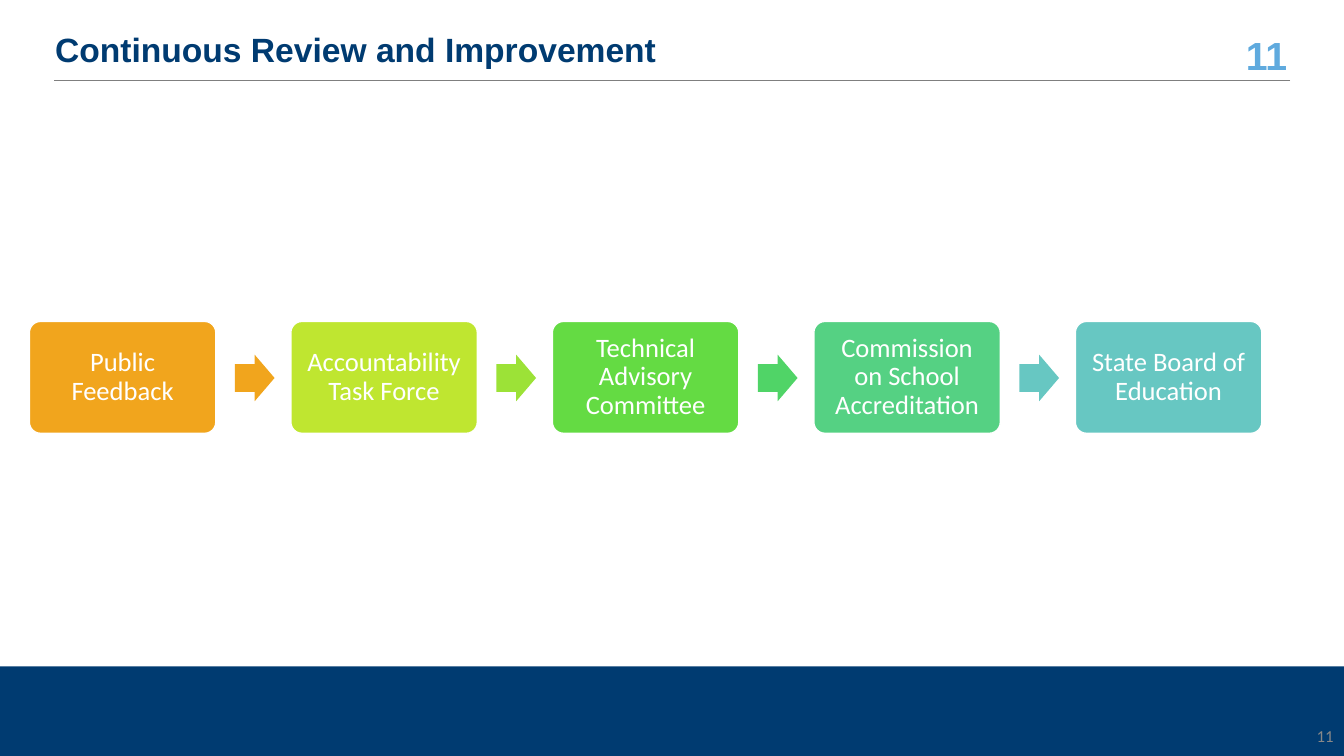
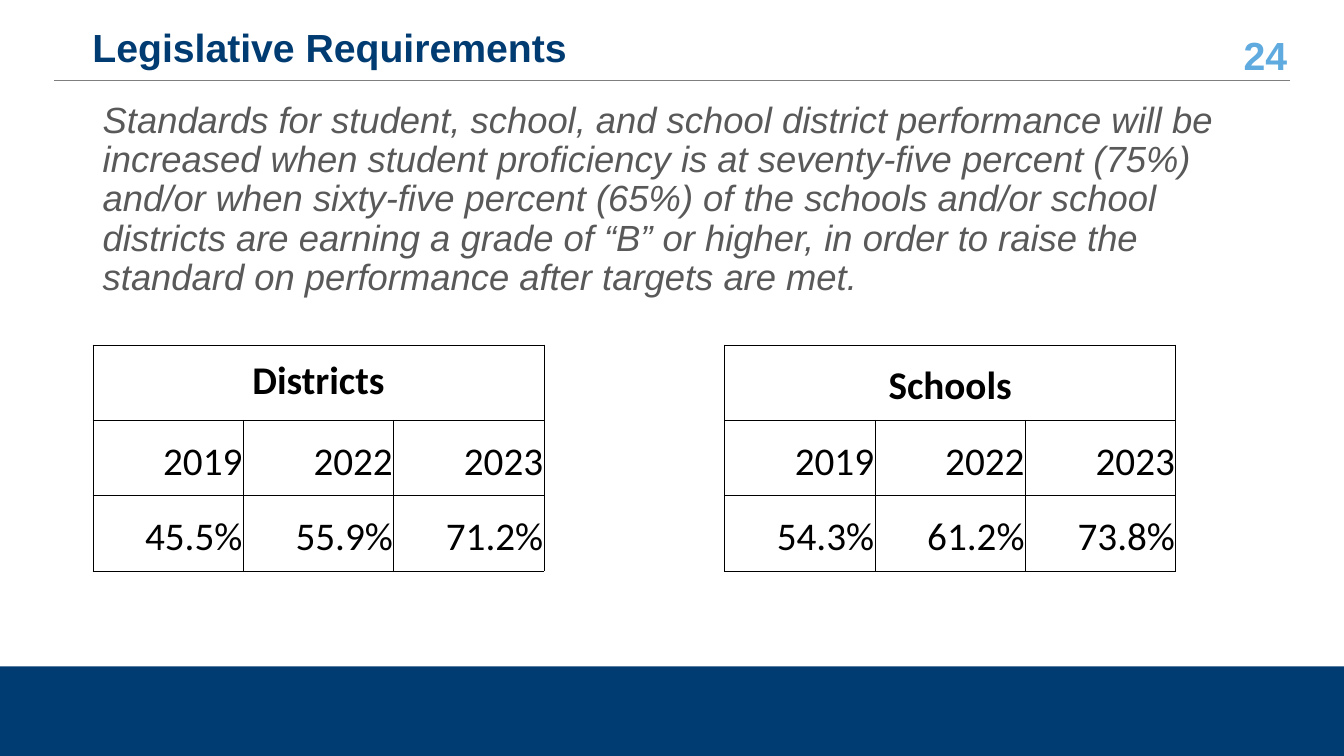
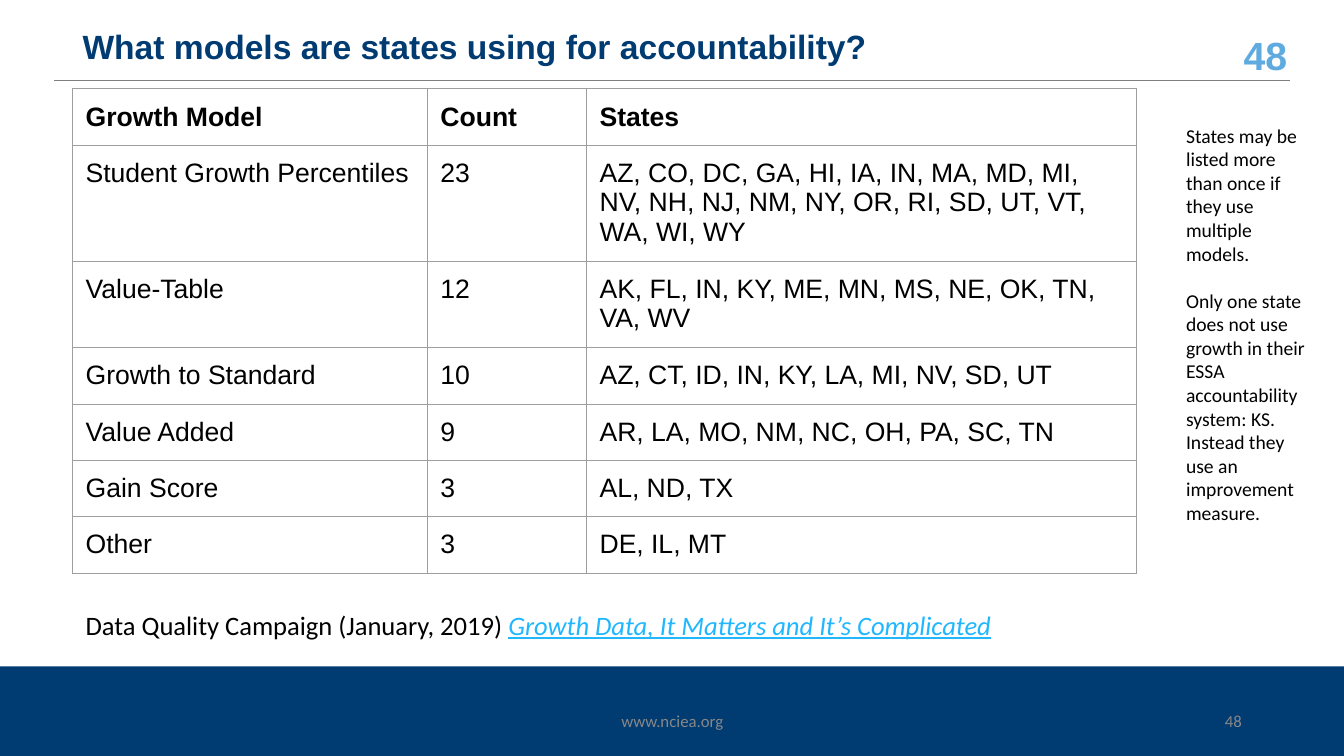
"""Build three slides on school accountability review, targets and growth models."""
from lxml.etree import SubElement
from pptx import Presentation
from pptx.dml.color import RGBColor
from pptx.enum.shapes import MSO_CONNECTOR, MSO_SHAPE
from pptx.enum.text import MSO_ANCHOR, MSO_AUTO_SIZE, PP_ALIGN
from pptx.oxml import parse_xml
from pptx.oxml.ns import nsdecls, qn
from pptx.util import Cm, Pt

NAVY, SKY, GREY, WHITE, BLACK = "003B71", "5FAADE", "888888", "FFFFFF", "000000"
WIDTH, HEIGHT = 33.87, 19.05
PLAIN_INSETS = (0.25, 0.13, 0.25, 0.13)
SIDES = ("left", "top", "right", "bottom")

TITLE_FONT = {"name": "Arial", "size": Pt(24), "bold": True, "color": NAVY}
NUMBER_FONT = {"name": "Arial", "size": Pt(28), "bold": True, "color": SKY}
FOOTER_FONT = {"name": "Calibri", "size": Pt(12), "color": GREY}
STEP_FONT = {"name": "Calibri", "size": Pt(19), "color": WHITE}
QUOTE_FONT = {"name": "Arial", "size": Pt(26), "italic": True, "color": "595959"}
RATE_FONT = {"name": "Calibri", "size": Pt(28), "color": BLACK}
MODEL_FONT = {"name": "Arial", "size": Pt(19), "color": BLACK}
SOURCE_FONT = {"name": "Calibri", "size": Pt(19), "color": BLACK}
LINK_FONT = {**SOURCE_FONT, "color": "20B7FF", "italic": True, "underline": True}
NOTE_FONT = {"name": "Calibri", "size": Pt(14), "color": BLACK}

TIGHT = {"line_spacing": 0.9}
CENTRED = {"alignment": PP_ALIGN.CENTER}
RIGHT = {"alignment": PP_ALIGN.RIGHT}

STEPS = [
    ("Public Feedback", "F1A51D", "F1A51D"),
    ("Accountability Task Force", "BFE630", "9CE237"),
    ("Technical Advisory Committee", "64DB43", "50D467"),
    ("Commission on School Accreditation", "55D183", "67C7C2"),
    ("State Board of Education", "67C7C2", None),
]
REQUIREMENT = (
    "Standards for student, school, and school district performance will be increased "
    "when student proficiency is at seventy-five percent (75%) and/or when sixty-five "
    "percent (65%) of the schools and/or school districts are earning a grade of “B” or "
    "higher, in order to raise the standard on performance after targets are met."
)
YEARS = ["2019", "2022", "2023"]
RATES = [
    ("Districts", 2.34, MSO_ANCHOR.MIDDLE, ["45.5%", "55.9%", "71.2%"]),
    ("Schools", 18.26, MSO_ANCHOR.BOTTOM, ["54.3%", "61.2%", "73.8%"]),
]
MODELS = [
    ("Growth Model", "Count", "States"),
    ("Student Growth Percentiles", "23",
     "AZ, CO, DC, GA, HI, IA, IN, MA, MD, MI, NV, NH, NJ, NM, NY, OR, RI, SD, UT, VT, "
     "WA, WI, WY"),
    ("Value-Table", "12", "AK, FL, IN, KY, ME, MN, MS, NE, OK, TN, VA, WV"),
    ("Growth to Standard", "10", "AZ, CT, ID, IN, KY, LA, MI, NV, SD, UT"),
    ("Value Added", "9", "AR, LA, MO, NM, NC, OH, PA, SC, TN"),
    ("Gain Score", "3", "AL, ND, TX"),
    ("Other", "3", "DE, IL, MT"),
]
MODEL_COLUMNS = [8.94, 4.01, 13.87]
MODEL_ROWS = [1.42, 2.92, 2.18, 1.42, 1.42, 1.42, 1.42]
SOURCE = [
    ("Data Quality Campaign (January, 2019) ", SOURCE_FONT),
    ("Growth Data, It Matters and It’s Complicated", LINK_FONT),
]
NOTES = [
    "States may be listed more than once if they use multiple models.",
    "Only one state does not use growth in their ESSA accountability system: KS. "
    "Instead they use an improvement measure.",
]


def colour(value):
    """Return the colour for a hex string."""
    return RGBColor.from_string(value)


def place(*lengths):
    """Turn centimetres into lengths."""
    return [Cm(length) for length in lengths]


def apply(target, values):
    """Set every named attribute on the target."""
    for name, value in values.items():
        setattr(target, name, value)


def inset(holder, insets, anchor):
    """Set the margins and vertical anchor of a text frame or a cell."""
    apply(holder, {f"margin_{side}": Cm(gap) for side, gap in zip(SIDES, insets)})
    holder.vertical_anchor = anchor


def add_span(para, text, font):
    """Add one formatted piece of text to a paragraph."""
    span = para.add_run()
    span.text = text
    apply(span.font, {name: value for name, value in font.items() if name != "color"})
    span.font.color.rgb = colour(font["color"])


def fill_frame(frame, text, font, layout, insets=PLAIN_INSETS, anchor=MSO_ANCHOR.MIDDLE):
    """Write a single paragraph into the frame of a shape."""
    frame.word_wrap = True
    frame.auto_size = MSO_AUTO_SIZE.NONE
    inset(frame, insets, anchor)
    para = frame.paragraphs[0]
    apply(para, layout)
    if text:
        add_span(para, text, font)
    return para


def add_text(page, area, text, font, layout, **options):
    """Add a text box and return its paragraph."""
    box = page.shapes.add_textbox(*place(*area))
    return fill_frame(box.text_frame, text, font, layout, **options)


def add_block(page, kind, area, fill, adjustments=(), line=None):
    """Add a filled preset shape."""
    shape = page.shapes.add_shape(kind, *place(*area))
    shape.shadow.inherit = False
    shape.fill.solid()
    shape.fill.fore_color.rgb = colour(fill)
    for index, value in enumerate(adjustments):
        shape.adjustments[index] = value
    if line:
        shape.line.color.rgb = colour(line)
        shape.line.width = Pt(1)
    else:
        shape.line.fill.background()
    return shape


def add_page(deck, title, area, number, size=24):
    """Add a slide with the shared band, number, rule and title."""
    page = deck.slides.add_slide(deck.slide_layouts[5])
    add_block(page, MSO_SHAPE.RECTANGLE, (0, 16.79, WIDTH, HEIGHT - 16.79), NAVY)
    add_text(page, (30.66, 0.84, 2.03, 1.07), number, NUMBER_FONT, RIGHT)
    rule = page.shapes.add_connector(MSO_CONNECTOR.STRAIGHT, *place(32.51, 2.03, 1.37, 2.03))
    rule.line.color.rgb = colour("7F7F7F")
    rule.line.width = Pt(0.75)
    SubElement(rule._element.spPr, qn("a:effectLst"))
    heading = page.shapes.title
    apply(heading, dict(zip(("left", "top", "width", "height"), place(*area))))
    fill_frame(heading.text_frame, title, {**TITLE_FONT, "size": Pt(size)},
               {**TIGHT, "alignment": PP_ALIGN.LEFT})
    return page


def add_grid(page, corner, columns, rows, line, width):
    """Add an unfilled table with the same border around every cell."""
    frame = page.shapes.add_table(len(rows), len(columns),
                                  *place(*corner, sum(columns), sum(rows)))
    table = frame.table
    apply(table, {"first_row": False, "horz_banding": False})
    for column, length in zip(table.columns, columns):
        column.width = Cm(length)
    for row, length in zip(table.rows, rows):
        row.height = Cm(length)
    for cell in table.iter_cells():
        cell.fill.background()
        for index, side in enumerate("LRTB"):
            border = (f'<a:ln{side} {nsdecls("a")} w="{Pt(width)}"><a:solidFill>'
                      f'<a:srgbClr val="{line}"/></a:solidFill></a:ln{side}>')
            cell._tc.get_or_add_tcPr().insert(index, parse_xml(border))
    return table


def fill_cell(cell, text, font, insets, anchor, layout):
    """Write one formatted paragraph into a table cell."""
    inset(cell, insets, anchor)
    para = cell.text_frame.paragraphs[0]
    apply(para, layout)
    add_span(para, text, font)


def build_review(deck):
    """Build the review process."""
    page = add_page(deck, "Continuous Review and Improvement", (1.14, 0.76, 29.46, 1.07), "11")
    add_text(page, (31.83, 18.11, 2.03, 0.86), "11", FOOTER_FONT, RIGHT)
    for index, (label, fill, arrow) in enumerate(STEPS):
        left = 0.74 + index * 6.59
        step = add_block(page, MSO_SHAPE.ROUNDED_RECTANGLE, (left, 8.1, 4.7, 2.82),
                         fill, [0.1], WHITE)
        fill_frame(step.text_frame, label, STEP_FONT, {**TIGHT, **CENTRED}, insets=[0.28] * 4)
        if arrow:
            add_block(page, MSO_SHAPE.RIGHT_ARROW, (left + 5.18, 8.94, 1, 1.17),
                      arrow, [0.6, 0.5])


def build_requirements(deck):
    """Build the requirement and the two rate tables."""
    page = add_page(deck, "Legislative Requirements", (2.08, 0.71, 29.46, 1.07), "24", 28)
    add_text(page, (2.34, 2.44, 29.21, 5.6), REQUIREMENT, QUOTE_FONT, TIGHT,
             anchor=MSO_ANCHOR.TOP)
    insets = (0.02, 0.02, 0.02, 0.25)
    spacing = {"line_spacing": 1.15}
    for heading, left, anchor, rates in RATES:
        table = add_grid(page, (left, 8.69), [3.79] * 3, [1.9] * 3, BLACK, 0.5)
        table.cell(0, 0).merge(table.cell(0, 2))
        fill_cell(table.cell(0, 0), heading, {**RATE_FONT, "bold": True}, insets, anchor,
                  {**spacing, **CENTRED})
        for row, values in enumerate((YEARS, rates), 1):
            for column, value in enumerate(values):
                fill_cell(table.cell(row, column), value, RATE_FONT, insets,
                          MSO_ANCHOR.BOTTOM, {**spacing, **RIGHT})


def build_models(deck):
    """Build the growth model table with its source and notes."""
    page = add_page(deck, "What models are states using for accountability?",
                    (1.83, 0, 27.81, 2.46), "48")
    table = add_grid(page, (1.83, 2.24), MODEL_COLUMNS, MODEL_ROWS, "9E9E9E", 0.75)
    for row, values in enumerate(MODELS):
        for column, value in enumerate(values):
            fill_cell(table.cell(row, column), value, {**MODEL_FONT, "bold": row == 0},
                      [0.33] * 4, MSO_ANCHOR.TOP, {})
    source = add_text(page, (1.83, 15.01, 27.81, 1.5), "", SOURCE_FONT, {},
                      insets=[0.33] * 4, anchor=MSO_ANCHOR.TOP)
    for text, font in SOURCE:
        add_span(source, text, font)
    box = page.shapes.add_textbox(*place(29.64, 2.87, 3.63, 12.5))
    fill_frame(box.text_frame, NOTES[0], NOTE_FONT, {}, [0.25] * 4, MSO_ANCHOR.TOP)
    for note in NOTES[1:]:
        para = box.text_frame.add_paragraph()
        para.space_before = Pt(17)
        add_span(para, note, NOTE_FONT)
    add_text(page, (23.93, 17.65, 7.62, 1.02), "48", FOOTER_FONT, RIGHT)
    add_text(page, (11.23, 17.65, 11.43, 1.02), "www.nciea.org", FOOTER_FONT, CENTRED)


def main():
    """Build and save the deck."""
    deck = Presentation()
    apply(deck, {"slide_width": Cm(WIDTH), "slide_height": Cm(HEIGHT)})
    for build in (build_review, build_requirements, build_models):
        build(deck)
    deck.save("out.pptx")


if __name__ == "__main__":
    main()
